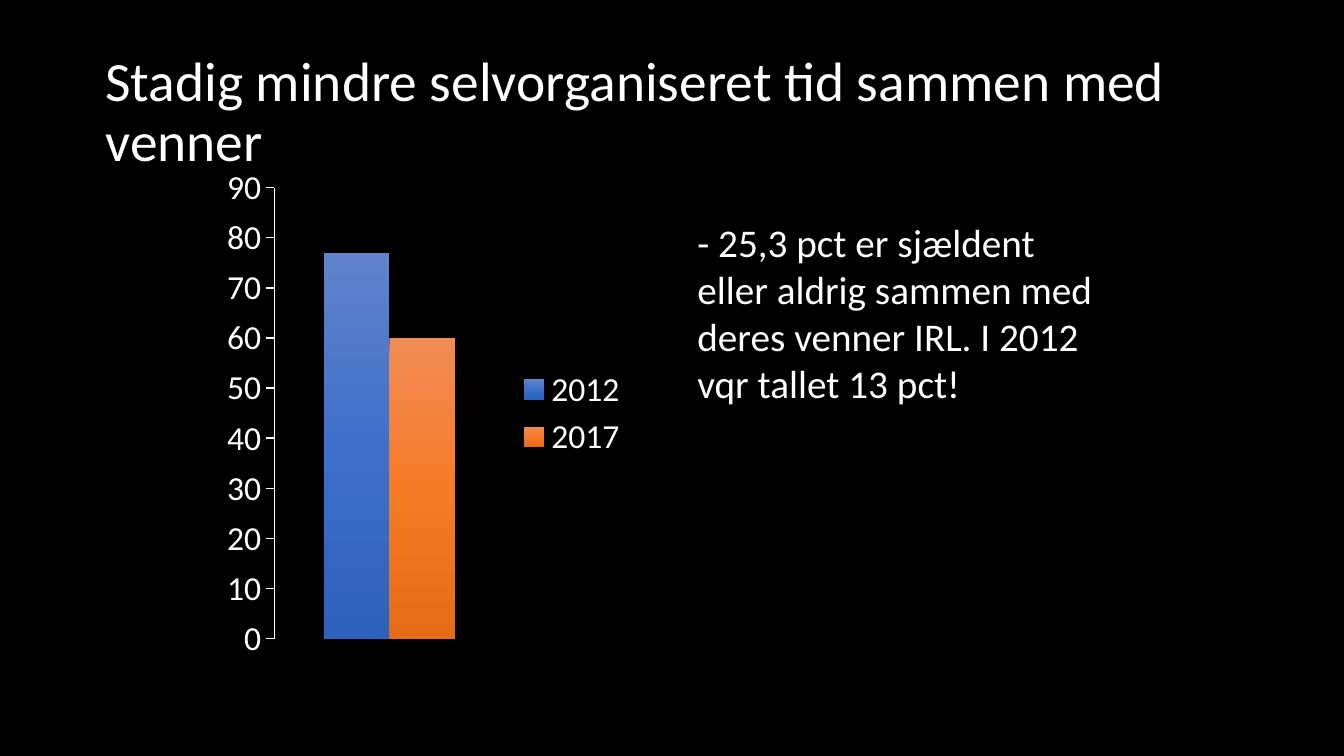
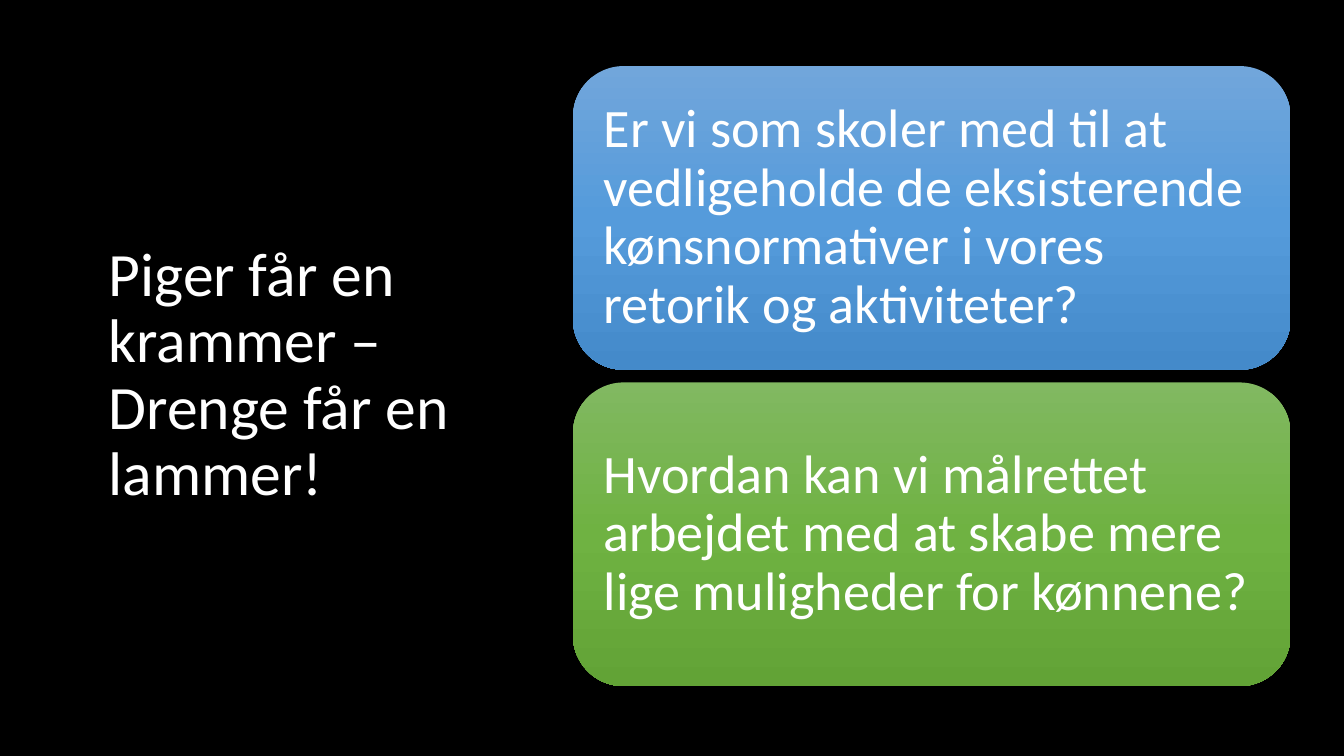
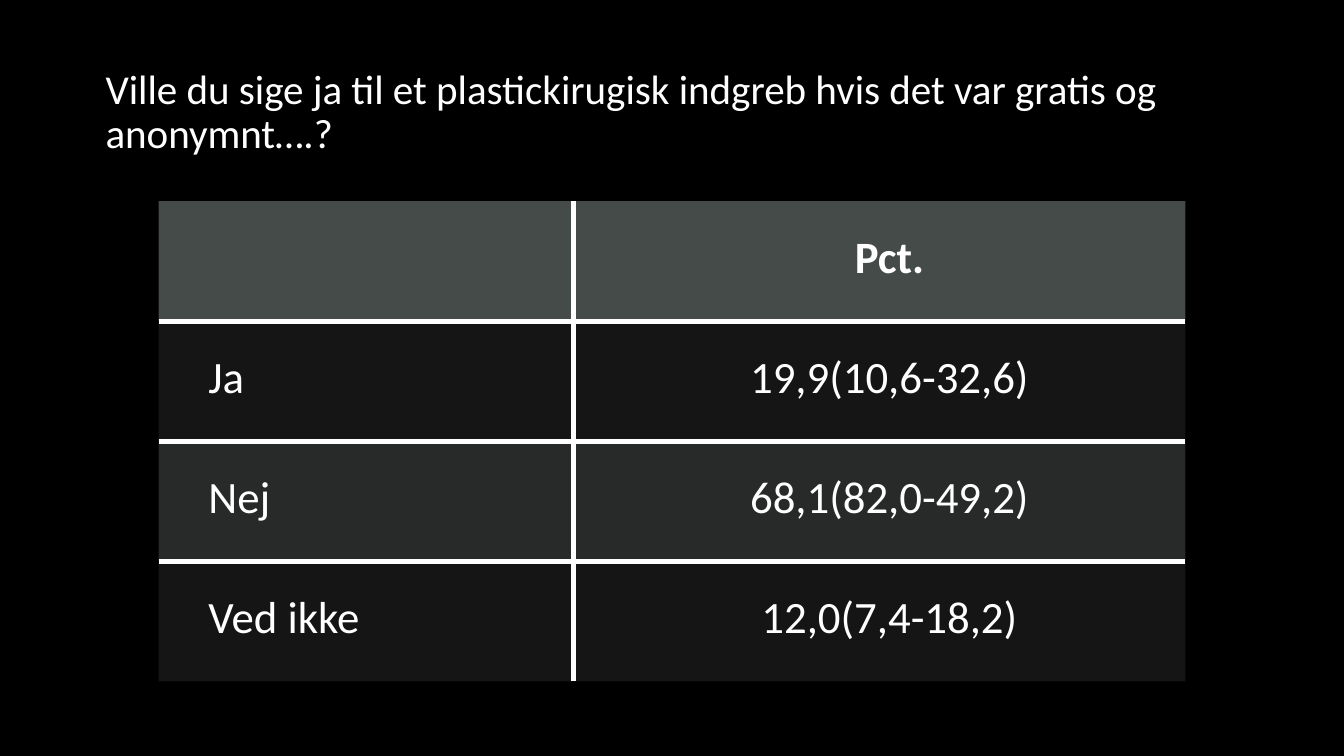
"""Builds three dark slides on young people's friendships, gender norms and cosmetic surgery."""
from copy import deepcopy
from dataclasses import dataclass

from lxml.etree import SubElement
from pptx import Presentation
from pptx.chart.data import CategoryChartData
from pptx.dml.color import RGBColor
from pptx.enum.chart import XL_CHART_TYPE as ChartType
from pptx.enum.chart import XL_LEGEND_POSITION as LegendPosition
from pptx.enum.chart import XL_TICK_MARK as TickMark
from pptx.enum.shapes import MSO_SHAPE as Shape
from pptx.enum.text import MSO_ANCHOR as Anchor
from pptx.enum.text import MSO_AUTO_SIZE as AutoSize
from pptx.enum.text import PP_ALIGN as Align
from pptx.oxml.ns import qn
from pptx.util import Cm, Pt


@dataclass(frozen=True)
class Theme:
    """Colours, font and type sizes shared by the slides."""
    font: str = "Calibri"
    back: str = "000000"
    ink: str = "FFFFFF"
    blue: tuple = ("6083CB", "3E70CA", "2E61BA")
    orange: tuple = ("F18C55", "F67B28", "E56B17")
    sky: tuple = ("71A6DB", "559BDB", "448ACA")
    green: tuple = ("81B861", "6FB242", "62A336")
    header: tuple = ("636B68", 70)
    bands: tuple = (("878E8B", 15), ("878E8B", 30))
    wide_title_size: float = 29.7
    side_title_size: float = 33
    question_title_size: float = 22
    axis_size: float = 18
    note_size: float = 21
    cell_size: float = 24
    card_size: float = 29


THEME = Theme()
TOP_TITLE = (1.74, 0.76, 21.9, 2.77)
SIDE_TITLE = (1.8, 2.12, 7.11, 9.98)

FRIENDS = {
    "title": "Stadig mindre selvorganiseret tid sammen med venner",
    "series": [("2012", 77, THEME.blue), ("2017", 60, THEME.orange)],
    "note": "- 25,3 pct er sjældent eller aldrig sammen med deres venner IRL. "
            "I 2012 vqr tallet 13 pct!",
}
GENDER = {
    "title": "Piger får en krammer – Drenge får en lammer!",
    "cards": [
        ("Er vi som skoler med til at vedligeholde de eksisterende "
         "kønsnormativer i vores retorik og aktiviteter?", THEME.sky),
        ("Hvordan kan vi målrettet arbejdet med at skabe mere lige "
         "muligheder for kønnene?", THEME.green),
    ],
}
SURGERY = {
    "title": "Ville du sige ja til et plastickirugisk indgreb hvis det var "
             "gratis og anonymnt….?",
    "rows": [
        ("", "Pct."),
        ("Ja", "19,9(10,6-32,6)"),
        ("Nej", "68,1(82,0-49,2)"),
        ("Ved ikke", "12,0(7,4-18,2)"),
    ],
}


def rgb(colour):
    """Turn a hex string into a colour."""
    return RGBColor.from_string(colour)


def style_font(font, size, bold=False):
    """Apply the shared font and ink at one size."""
    font.name, font.size, font.bold = THEME.font, Pt(size), bold
    font.color.rgb = rgb(THEME.ink)


def write(para, text, size, bold=False, align=Align.LEFT, spacing=None):
    """Write one styled run into a paragraph."""
    para.alignment = align
    if spacing:
        para.line_spacing = spacing
    span = para.add_run()
    span.text = text
    style_font(span.font, size, bold)


def set_margins(holder, left, top, right, bottom):
    """Set the four text margins of a frame or cell in centimetres."""
    holder.margin_left, holder.margin_top = Cm(left), Cm(top)
    holder.margin_right, holder.margin_bottom = Cm(right), Cm(bottom)


def paint_gradient(fill, element, colours):
    """Fill from top to bottom through three colours."""
    fill.gradient()
    fill.gradient_angle = 270
    stops = element.find(".//" + qn("a:gsLst"))
    stops.insert(1, deepcopy(stops[0]))
    for index, (stop, colour) in enumerate(zip(fill.gradient_stops, colours)):
        stop.position = index / 2
        stop.color.rgb = rgb(colour)


def add_page(deck, title, place, size):
    """Add a title-only slide with its title placed and styled."""
    page = deck.slides.add_slide(deck.slide_layouts[5])
    box = page.shapes.title
    box.left, box.top, box.width, box.height = map(Cm, place)
    frame = box.text_frame
    frame.word_wrap, frame.auto_size = True, AutoSize.NONE
    frame.vertical_anchor = Anchor.MIDDLE
    write(frame.paragraphs[0], title, size, spacing=0.9)
    return page


def add_friends(deck):
    """Column chart beside a short note."""
    page = add_page(deck, FRIENDS["title"], TOP_TITLE, THEME.wide_title_size)
    data = CategoryChartData()
    data.categories = ["1"]
    for name, value, _ in FRIENDS["series"]:
        data.add_series(name, [value])
    chart = page.shapes.add_chart(ChartType.COLUMN_CLUSTERED, Cm(4.13), Cm(2.97),
                                  Cm(8), Cm(9.68), data).chart
    style_font(chart.font, THEME.axis_size)
    chart.has_title = False
    chart.has_legend = True
    chart.legend.position = LegendPosition.RIGHT
    chart.legend.include_in_layout = False
    chart.category_axis.visible = False
    axis = chart.value_axis
    axis.has_major_gridlines = False
    axis.minimum_scale, axis.maximum_scale, axis.major_unit = 0, 90, 10
    axis.major_tick_mark = TickMark.OUTSIDE
    axis.format.line.color.rgb = rgb(THEME.ink)
    plot = chart.plots[0]
    plot.gap_width, plot.overlap, plot.vary_by_categories = 150, 0, False
    for series, (_, _, colours) in zip(plot.series, FRIENDS["series"]):
        paint_gradient(series.format.fill, series._element, colours)

    frame = page.shapes.add_textbox(Cm(13), Cm(3), Cm(8), Cm(9.42)).text_frame
    frame.word_wrap = True
    set_margins(frame, 0.18, 1.13, 0.18, 0.1)
    write(frame.paragraphs[0], FRIENDS["note"], THEME.note_size)


def add_gender(deck):
    """Two stacked question cards beside the title."""
    page = add_page(deck, GENDER["title"], SIDE_TITLE, THEME.side_title_size)
    top, height, gap = 1.25, 5.74, 0.24
    for index, (question, colours) in enumerate(GENDER["cards"]):
        card = page.shapes.add_shape(Shape.ROUNDED_RECTANGLE, Cm(10.83),
                                     Cm(top + index * (height + gap)),
                                     Cm(13.56), Cm(height))
        card.shadow.inherit = False
        card.line.fill.background()
        paint_gradient(card.fill, card._element, colours)
        frame = card.text_frame
        frame.word_wrap, frame.vertical_anchor = True, Anchor.MIDDLE
        set_margins(frame, 0.3, 0.3, 0.3, 0.3)
        write(frame.paragraphs[0], question, THEME.card_size, spacing=0.9)


def paint_cell(cell, colour, opacity, inner):
    """Tint a cell and rule only its inner edges."""
    cell.fill.solid()
    cell.fill.fore_color.rgb = rgb(colour)
    properties = cell._tc.get_or_add_tcPr()
    tint = properties.find(".//" + qn("a:srgbClr"))
    SubElement(tint, qn("a:alpha"), val=str(opacity * 1000))
    for index, side in enumerate("LRTB"):
        line = SubElement(properties, qn(f"a:ln{side}"), w=str(Pt(3)))
        properties.insert(index, line)
        if side in inner:
            solid = SubElement(line, qn("a:solidFill"))
            SubElement(solid, qn("a:srgbClr"), val=THEME.ink)
        else:
            SubElement(line, qn("a:noFill"))


def add_surgery(deck):
    """Answer table with translucent bands under an elliptical title."""
    page = add_page(deck, SURGERY["title"], TOP_TITLE, THEME.question_title_size)
    outline = SubElement(page.shapes.title._element.spPr, qn("a:prstGeom"), prst="ellipse")
    SubElement(outline, qn("a:avLst"))
    rows, widths, height = SURGERY["rows"], (7.84, 11.56), 2.27
    table = page.shapes.add_table(len(rows), len(widths), Cm(3), Cm(3.8),
                                  Cm(sum(widths)), Cm(height * len(rows))).table
    for column, width in zip(table.columns, widths):
        column.width = Cm(width)
    for r, texts in enumerate(rows):
        table.rows[r].height = Cm(height)
        tint = THEME.bands[(r - 1) % 2] if r else THEME.header
        for c, text in enumerate(texts):
            cell = table.cell(r, c)
            edges = {"L": c > 0, "R": c < len(widths) - 1,
                     "T": r > 0, "B": r < len(rows) - 1}
            paint_cell(cell, *tint, [side for side in edges if edges[side]])
            set_margins(cell, 0.94, 0.56, 0.56, 0.56)
            if text:
                write(cell.text_frame.paragraphs[0], text, THEME.cell_size,
                      bold=r == 0, align=Align.CENTER if c else Align.LEFT)


def main():
    """Build and save the deck."""
    deck = Presentation()
    deck.slide_width, deck.slide_height = Cm(25.4), Cm(14.29)
    backdrop = deck.slide_master.background.fill
    backdrop.solid()
    backdrop.fore_color.rgb = rgb(THEME.back)
    for add_slide in (add_friends, add_gender, add_surgery):
        add_slide(deck)
    deck.save("out.pptx")


if __name__ == "__main__":
    main()
